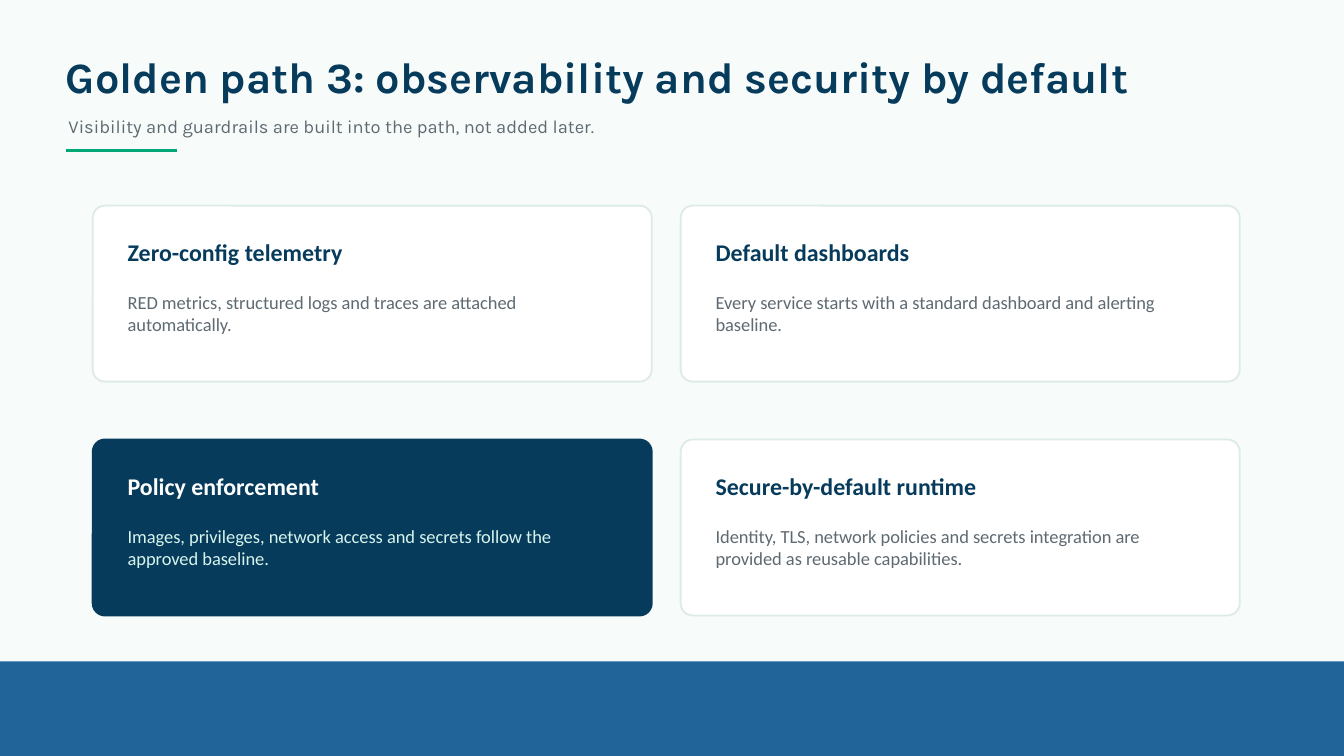
from pptx import Presentation
from pptx import util as u
from pptx.dml.color import RGBColor
from pptx.enum import shapes, text
from pptx.oxml.ns import qn
from lxml import etree

W, H = 10, 5.625
COLORS = {
    "bg": "F7FBFA", "band": "20649A", "navy": "073B5C", "grey": "5E6A72",
    "green": "00A878", "white": "FFFFFF", "border": "DDEBE9", "mint": "D7F4ED",
}
LEFT, TOP, CARD_W, CARD_H = 0.69, 1.53, 4.16, 1.31
COL_STEP, ROW_STEP, PAD = 4.375, 1.74, 0.26
CARDS = [
    ("Zero-config telemetry",
     "RED metrics, structured logs and traces are attached automatically."),
    ("Default dashboards",
     "Every service starts with a standard dashboard and alerting baseline."),
    ("Policy enforcement",
     "Images, privileges, network access and secrets follow the approved baseline."),
    ("Secure-by-default runtime",
     "Identity, TLS, network policies and secrets integration are provided as reusable capabilities."),
]
HIGHLIGHT = 2


def rgb(name):
    """Return the named palette colour."""
    return RGBColor.from_string(COLORS[name])


def add_text(s, content, x, y, w, h, *, size, color, font="Calibri", bold=False):
    """Add a middle-anchored text box without insets."""
    tf = s.shapes.add_textbox(*map(u.Inches, (x, y, w, h))).text_frame
    tf.word_wrap = True
    tf.vertical_anchor = text.MSO_ANCHOR.MIDDLE
    tf.margin_left = tf.margin_right = tf.margin_top = tf.margin_bottom = 0
    r = tf.paragraphs[0].add_run()
    r.text = content
    r.font.name, r.font.size, r.font.bold = font, u.Pt(size), bold
    r.font.color.rgb = rgb(color)


def add_box(s, kind, x, y, w, h, fill, line=None):
    """Add a flat filled shape with an optional outline."""
    sp = s.shapes.add_shape(kind, *map(u.Inches, (x, y, w, h)))
    sp.shadow.inherit = False
    sp.fill.solid()
    sp.fill.fore_color.rgb = rgb(fill)
    if line:
        sp.line.color.rgb = rgb(line)
        sp.line.width = u.Pt(1)
    else:
        sp.line.fill.background()
    return sp


def add_rule(s, x, y, w, color):
    """Add a horizontal accent line."""
    cx = s.shapes.add_connector(
        shapes.MSO_CONNECTOR.STRAIGHT, *map(u.Inches, (x, y, x + w, y)))
    cx.line.color.rgb = rgb(color)
    cx.line.width = u.Pt(2)
    etree.SubElement(cx._element.spPr, qn("a:effectLst"))


def add_card(s, index, heading, body):
    """Add one card at its place in the two-column grid."""
    row, col = divmod(index, 2)
    x, y = LEFT + col * COL_STEP, TOP + row * ROW_STEP
    dark = index == HIGHLIGHT
    fill, line = ("navy", "navy") if dark else ("white", "border")
    sp = add_box(s, shapes.MSO_SHAPE.ROUNDED_RECTANGLE, x, y, CARD_W, CARD_H, fill, line)
    sp.adjustments[0] = 0.07
    add_text(s, heading, x + PAD, y + 0.24, 3.56, 0.21,
             size=12.8, color="white" if dark else "navy", bold=True)
    add_text(s, body, x + PAD, y + 0.585, 3.6, 0.43,
             size=9.9, color="mint" if dark else "grey")


def main():
    """Build and save the slide."""
    prs = Presentation()
    prs.slide_width, prs.slide_height = u.Inches(W), u.Inches(H)
    s = prs.slides.add_slide(prs.slide_layouts[6])
    s.background.fill.solid()
    s.background.fill.fore_color.rgb = rgb("bg")
    add_box(s, shapes.MSO_SHAPE.RECTANGLE, 0, H * 0.875, W, H * 0.125, "band")
    add_text(s, "Golden path 3: observability and security by default",
             0.49, 0.36, 8.03, 0.41, size=23.2, color="navy", font="Karla", bold=True)
    add_text(s, "Visibility and guardrails are built into the path, not added later.",
             0.51, 0.82, 7.5, 0.24, size=9.8, color="grey", font="Karla")
    add_rule(s, 0.49, 1.12, 0.83, "green")
    for i, (heading, body) in enumerate(CARDS):
        add_card(s, i, heading, body)
    prs.save("out.pptx")


if __name__ == "__main__":
    main()
